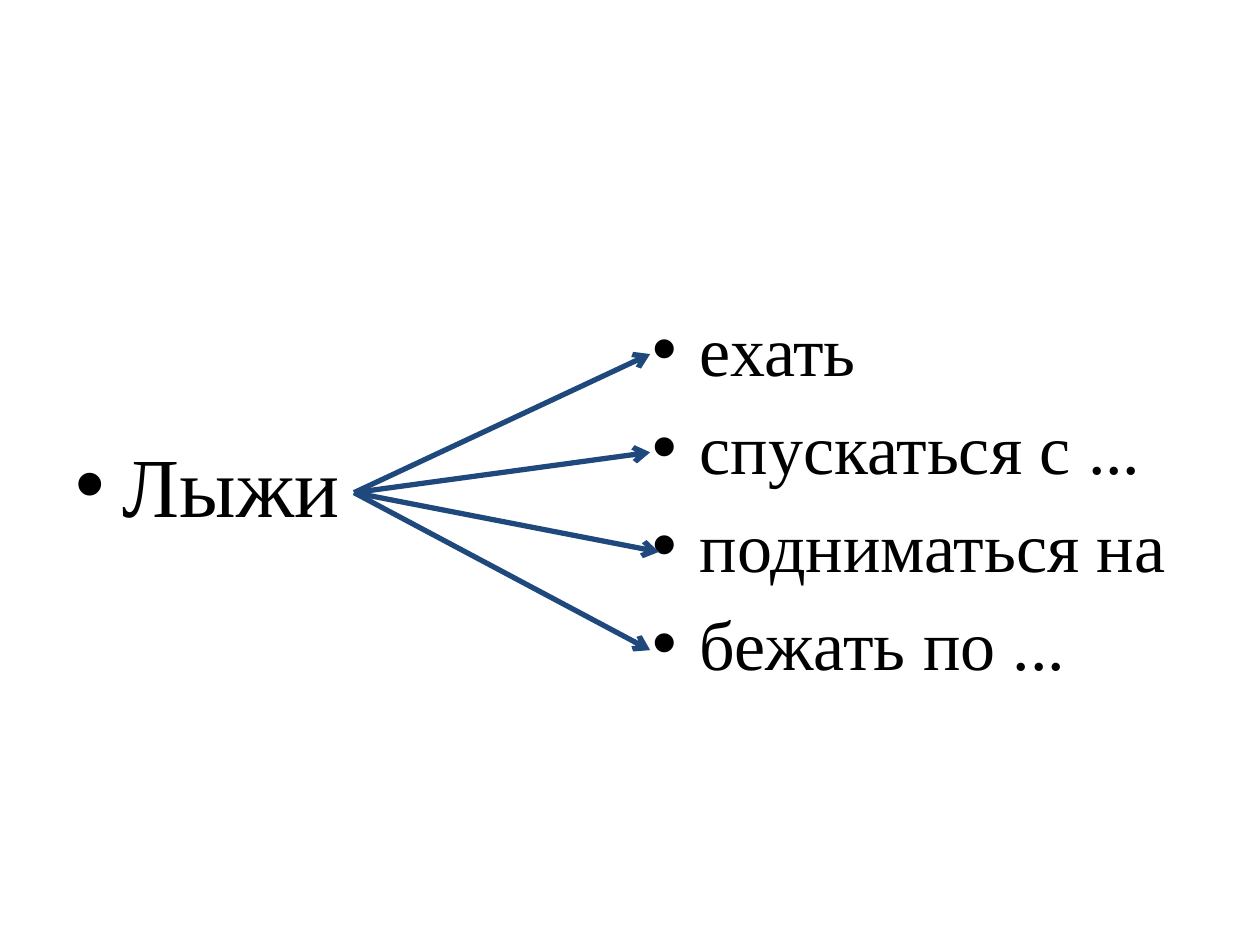
from lxml.etree import SubElement
from pptx import Presentation
from pptx.dml.color import RGBColor
from pptx.enum.shapes import MSO_CONNECTOR
from pptx.enum.text import MSO_AUTO_SIZE
from pptx.oxml.ns import qn
from pptx.util import Inches, Pt

COLORS = {"text": "000000", "arrow": "1F497D"}
FONT = "Times New Roman"
NOUN = ["Лыжи"]
VERBS = ["ехать", "спускаться с ...", "подниматься на", "бежать по ..."]
ARROW_START = (2.81, 3.91)
ARROW_ENDS = [(5.16, 2.81), (5.16, 3.59), (5.23, 4.38), (5.16, 5.16)]
TOP, WIDTH, HEIGHT = 2.38, 4.42, 4.32


def fill_list(sp, left, items, size):
    sp.left, sp.top = Inches(left), Inches(TOP)
    sp.width, sp.height = Inches(WIDTH), Inches(HEIGHT)
    tf = sp.text_frame
    tf.text = "\n".join(items)
    tf.auto_size = MSO_AUTO_SIZE.NONE
    for p in tf.paragraphs:
        for r in p.runs:
            r.font.name = FONT
            r.font.size = Pt(size)
            r.font.color.rgb = RGBColor.from_string(COLORS["text"])
    return tf


def add_arrow(s, start, end):
    points = [Inches(v) for v in (*start, *end)]
    line = s.shapes.add_connector(MSO_CONNECTOR.STRAIGHT, *points)
    line.line.color.rgb = RGBColor.from_string(COLORS["arrow"])
    line.line.width = Pt(3)
    props = line._element.spPr
    SubElement(props.find(qn("a:ln")), qn("a:tailEnd"), type="arrow")
    SubElement(props, qn("a:effectLst"))


def main():
    prs = Presentation()
    prs.slide_width, prs.slide_height = Inches(10), Inches(7.5)
    s = prs.slides.add_slide(prs.slide_layouts[3])
    title = s.shapes.title._element
    title.getparent().remove(title)

    noun = fill_list(s.placeholders[1], 0.5, NOUN, 48)
    noun.margin_top = Inches(1.06)
    noun.paragraphs[0].space_before = Pt(0)
    fill_list(s.placeholders[2], 5.08, VERBS, 40)

    for end in ARROW_ENDS:
        add_arrow(s, ARROW_START, end)
    prs.save("out.pptx")


if __name__ == "__main__":
    main()
